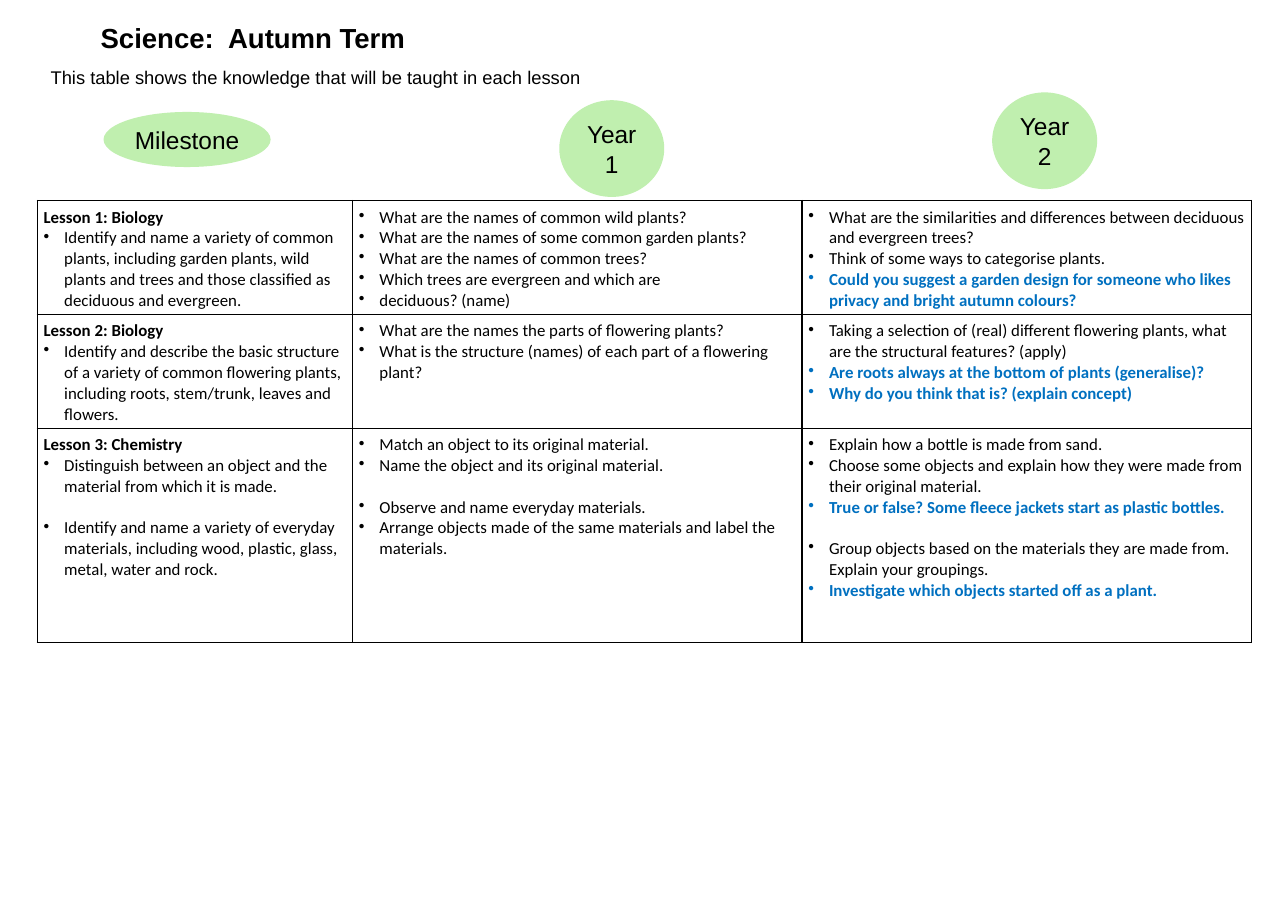
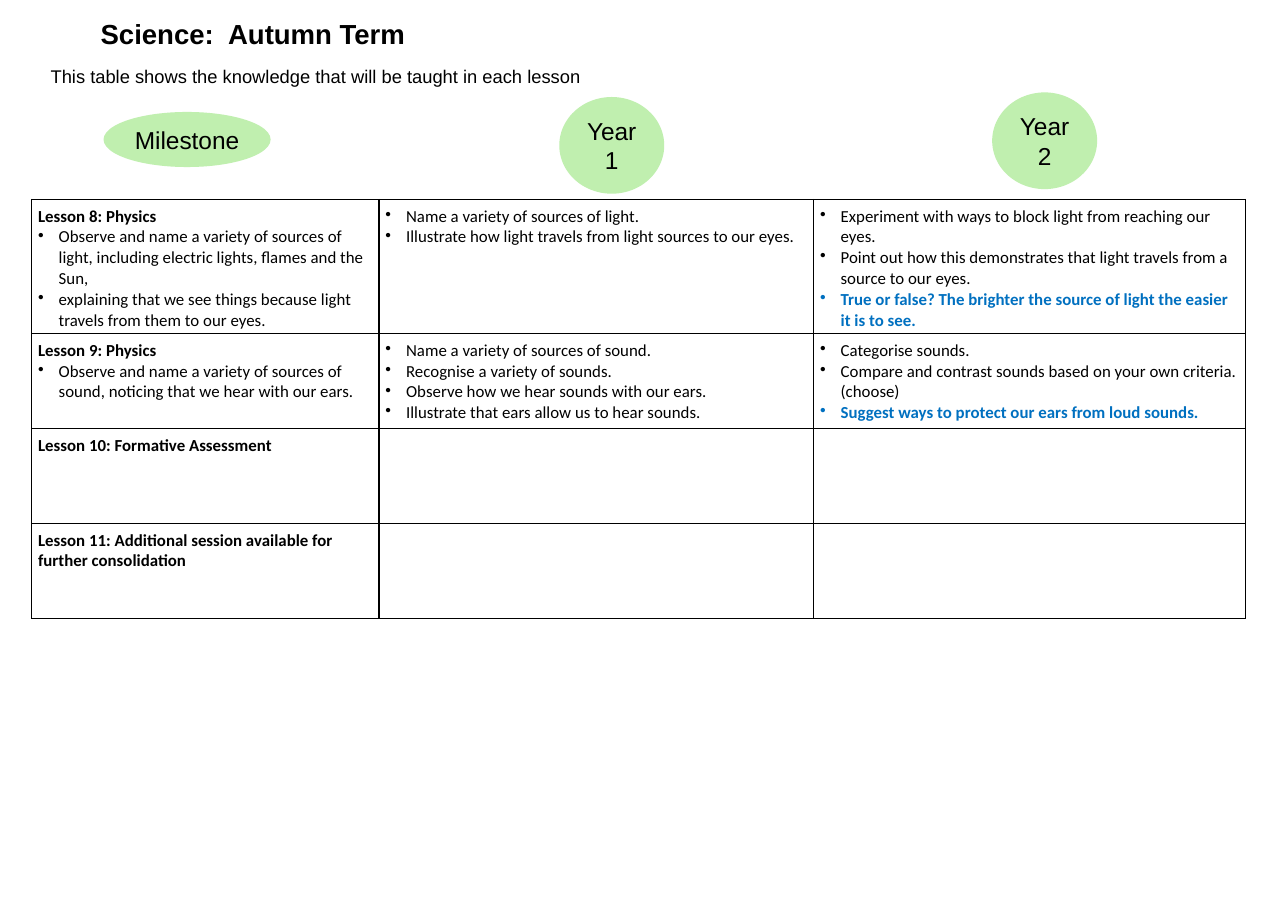
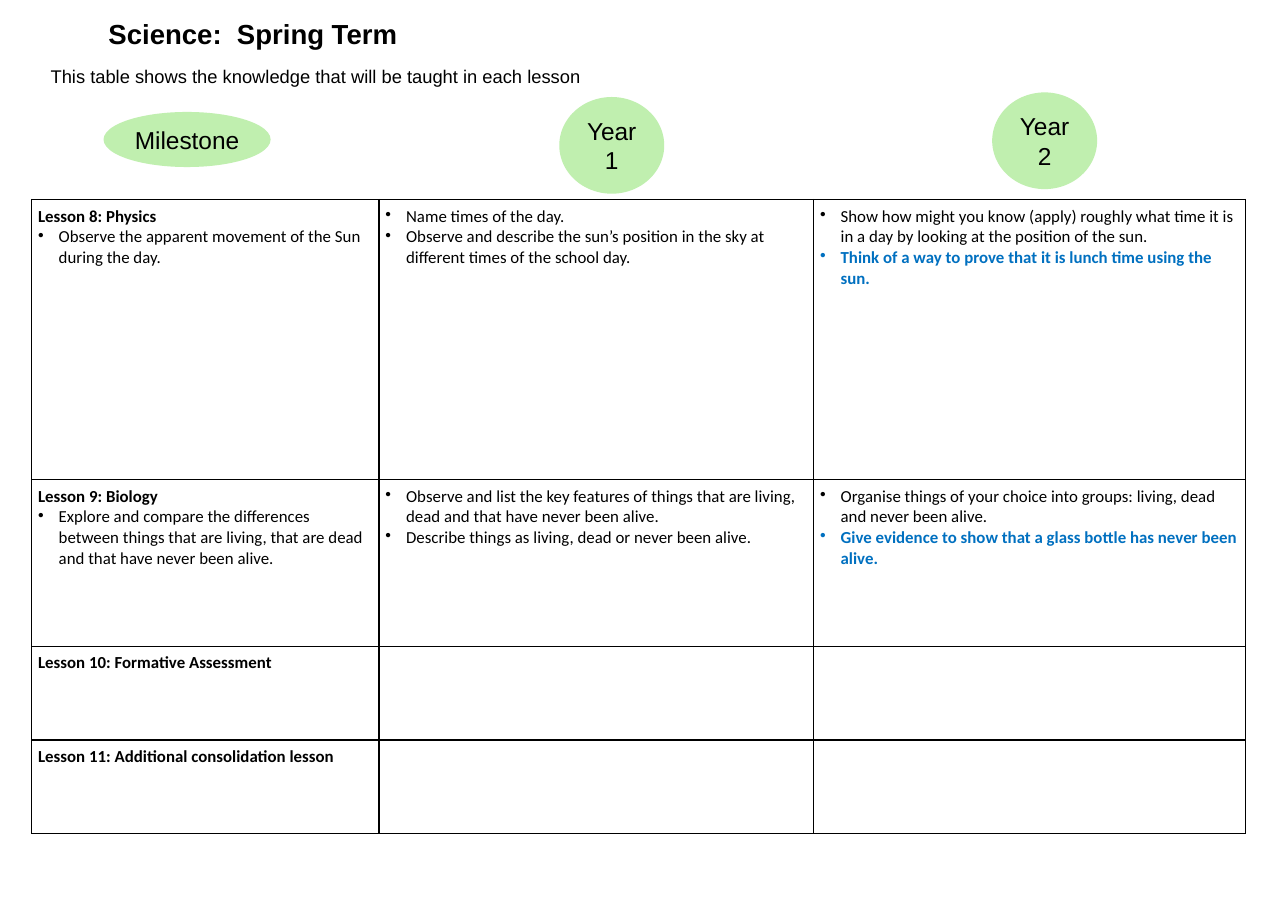
import dataclasses

import lxml.etree
import pptx
import pptx.dml.color
import pptx.enum.shapes
import pptx.enum.text
import pptx.oxml
import pptx.oxml.ns
import pptx.util

Pt = pptx.util.Pt
MIDDLE = pptx.enum.text.MSO_ANCHOR.MIDDLE
CENTER = pptx.enum.text.PP_ALIGN.CENTER


@dataclasses.dataclass(frozen=True)
class Theme:
    black: str = "000000"
    white: str = "FFFFFF"
    green: str = "C0EFAF"
    blue: str = "0070C0"
    head_font: str = "Arial"
    table_font: str = "Calibri"
    title_size: float = 18
    label_size: float = 16
    intro_size: float = 12
    table_size: float = 11
    box_inset: float = 2.9
    cell_inset: float = 4.2
    bullet_indent: float = 13.5
    group_gap: float = 13.5
    border: float = 1


@dataclasses.dataclass(frozen=True)
class Layout:
    """Vertical places and table grid of one kind of slide."""
    title_top: float
    intro_top: float
    year_1_top: float
    table_left: float
    table_top: float
    columns: tuple


@dataclasses.dataclass(frozen=True)
class Item:
    """One paragraph of a table cell."""
    text: str
    bulleted: bool = True
    bold: bool = False
    color: str = Theme.black
    gap: float = 0


def heading(text):
    return Item(text, bulleted=False, bold=True)


def challenge(text):
    return Item(text, bold=True, color=Theme.blue)


def new_group(text):
    """A bullet set apart from those above it."""
    return Item(text, gap=Theme.group_gap)


SLIDE_SIZE = (841.7, 594.7)
INTRO = "This table shows the knowledge that will be taught in each lesson"
FIRST = Layout(10.8, 40.3, 65.5, 24.3, 131, (206, 293.8, 293.8))
LATER = Layout(8, 39.6, 63.4, 20.7, 130.4, (227, 284, 282.5))

AUTUMN_START = [
    [[heading("Lesson 1: Biology"),
      Item("Identify and name a variety of common plants, including garden plants, wild plants "
           "and trees and those classified as deciduous and evergreen.")],
     [Item("What are the names of common wild plants?"),
      Item("What are the names of some common garden plants?"),
      Item("What are the names of common trees?"),
      Item("Which trees are evergreen and which are"),
      Item("deciduous? (name)")],
     [Item("What are the similarities and differences between deciduous and evergreen trees?"),
      Item("Think of some ways to categorise plants."),
      challenge("Could you suggest a garden design for someone who likes privacy and bright "
                "autumn colours?")]],
    [[heading("Lesson 2: Biology"),
      Item("Identify and describe the basic structure of a variety of common flowering plants, "
           "including roots, stem/trunk, leaves and flowers.")],
     [Item("What are the names the parts of flowering plants?"),
      Item("What is the structure (names) of each part of a flowering plant?")],
     [Item("Taking a selection of (real) different flowering plants, what are the structural "
           "features? (apply)"),
      challenge("Are roots always at the bottom of plants (generalise)?"),
      challenge("Why do you think that is? (explain concept)")]],
    [[heading("Lesson 3: Chemistry"),
      Item("Distinguish between an object and the material from which it is made."),
      new_group("Identify and name a variety of everyday materials, including wood, plastic, "
                "glass, metal, water and rock.")],
     [Item("Match an object to its original material."),
      Item("Name the object and its original material."),
      new_group("Observe and name everyday materials."),
      Item("Arrange objects made of the same materials and label the materials.")],
     [Item("Explain how a bottle is made from sand."),
      Item("Choose some objects and explain how they were made from their original material."),
      challenge("True or false? Some fleece jackets start as plastic bottles."),
      new_group("Group objects based on the materials they are made from. Explain your "
                "groupings."),
      challenge("Investigate which objects started off as a plant.")]],
]

AUTUMN_END = [
    [[heading("Lesson 8: Physics"),
      Item("Observe and name a variety of sources of light, including electric lights, flames "
           "and the Sun,"),
      Item("explaining that we see things because light travels from them to our eyes.")],
     [Item("Name a variety of sources of light."),
      Item("Illustrate how light travels from light sources to our eyes.")],
     [Item("Experiment with ways to block light from reaching our eyes."),
      Item("Point out how this demonstrates that light travels from a source to our eyes."),
      challenge("True or false? The brighter the source of light the easier it is to see.")]],
    [[heading("Lesson 9: Physics"),
      Item("Observe and name a variety of sources of sound, noticing that we hear with our "
           "ears.")],
     [Item("Name a variety of sources of sound."),
      Item("Recognise a variety of sounds."),
      Item("Observe how we hear sounds with our ears."),
      Item("Illustrate that ears allow us to hear sounds.")],
     [Item("Categorise sounds."),
      Item("Compare and contrast sounds based on your own criteria. (choose)"),
      challenge("Suggest ways to protect our ears from loud sounds.")]],
    [[heading("Lesson 10: Formative Assessment")], [], []],
    [[heading("Lesson 11: Additional session available for further consolidation")], [], []],
]

SPRING_END = [
    [[heading("Lesson 8: Physics"),
      Item("Observe the apparent movement of the Sun during the day.")],
     [Item("Name times of the day."),
      Item("Observe and describe the sun’s position in the sky at different times of the school "
           "day.")],
     [Item("Show how might you know (apply) roughly what time it is in a day by looking at the "
           "position of the sun."),
      challenge("Think of a way to prove that it is lunch time using the sun.")]],
    [[heading("Lesson 9: Biology"),
      Item("Explore and compare the differences between things that are living, that are dead "
           "and that have never been alive.")],
     [Item("Observe and list the key features of things that are living, dead and that have "
           "never been alive."),
      Item("Describe things as living, dead or never been alive.")],
     [Item("Organise things of your choice into groups: living, dead and never been alive."),
      challenge("Give evidence to show that a glass bottle has never been alive.")]],
    [[heading("Lesson 10: Formative Assessment")], [], []],
    [[heading("Lesson 11: Additional consolidation lesson")], [], []],
]

SLIDES = [
    ("Science:  Autumn Term", FIRST, (73.8, 73.8, 140.2), AUTUMN_START),
    ("Science:  Autumn Term", LATER, (87.6, 62, 62, 62), AUTUMN_END),
    ("Science:  Spring Term", LATER, (183, 109, 61.3, 61.3), SPRING_END),
]


def rgb(color):
    return pptx.dml.color.RGBColor.from_string(color)


def apply_format(target, values):
    for name, value in values.items():
        setattr(target, name, value)


def fill_solid(target, color):
    target.fill.solid()
    target.fill.fore_color.rgb = rgb(color)


def add_span(para, text, color=Theme.black, **font):
    span = para.add_run()
    span.text = text
    apply_format(span.font, font)
    span.font.color.rgb = rgb(color)


def set_insets(target, inset):
    sides = ("left", "top", "right", "bottom")
    apply_format(target, {f"margin_{side}": Pt(inset) for side in sides})


def write_box(box, text, size, align=None, wrap=True, bold=False):
    frame = box.text_frame
    apply_format(frame, {"word_wrap": wrap, "vertical_anchor": MIDDLE})
    set_insets(frame, Theme.box_inset)
    para = frame.paragraphs[0]
    para.alignment = align
    add_span(para, text, name=Theme.head_font, size=Pt(size), bold=bold)


def add_text(page, place, text, size, **style):
    write_box(page.shapes.add_textbox(*map(Pt, place)), text, size, **style)


def add_label(page, place, text):
    oval = page.shapes.add_shape(pptx.enum.shapes.MSO_SHAPE.OVAL, *map(Pt, place))
    oval.shadow.inherit = False
    fill_solid(oval, Theme.green)
    oval.line.fill.background()
    write_box(oval, text, Theme.label_size, align=CENTER)


def draw_borders(cell):
    properties = cell._tc.get_or_add_tcPr()
    for position, side in enumerate(("lnL", "lnR", "lnT", "lnB")):
        line = pptx.oxml.parse_xml(
            f'<a:{side} {pptx.oxml.ns.nsdecls("a")} w="{Pt(Theme.border)}">'
            f'<a:solidFill><a:srgbClr val="{Theme.black}"/></a:solidFill></a:{side}>')
        properties.insert(position, line)


def make_bullet(para):
    properties = para._p.get_or_add_pPr()
    indent = Pt(Theme.bullet_indent)
    properties.set("marL", str(indent))
    properties.set("indent", str(-indent))
    bullet = lxml.etree.SubElement(properties, pptx.oxml.ns.qn("a:buChar"))
    bullet.set("char", "•")


def write_cell(cell, items):
    fill_solid(cell, Theme.white)
    draw_borders(cell)
    set_insets(cell, Theme.cell_inset)
    frame = cell.text_frame
    for index, item in enumerate(items):
        para = frame.add_paragraph() if index else frame.paragraphs[0]
        if item.gap:
            para.space_before = Pt(item.gap)
        if item.bulleted:
            make_bullet(para)
        add_span(para, item.text, item.color, name=Theme.table_font,
                 size=Pt(Theme.table_size), bold=item.bold)


def add_lessons(page, layout, heights, lessons):
    place = (layout.table_left, layout.table_top, sum(layout.columns), sum(heights))
    table = page.shapes.add_table(len(heights), len(layout.columns), *map(Pt, place)).table
    apply_format(table, {"first_row": False, "horz_banding": False})
    for column, width in zip(table.columns, layout.columns):
        column.width = Pt(width)
    for row, height, lesson in zip(table.rows, heights, lessons):
        row.height = Pt(height)
        for cell, items in zip(row.cells, lesson):
            write_cell(cell, items)


def add_page(deck, title, layout, heights, lessons):
    page = deck.slides.add_slide(deck.slide_layouts[6])
    add_text(page, (60.5, layout.title_top, 209.5, 28), title, Theme.title_size,
             align=CENTER, wrap=False, bold=True)
    add_text(page, (30.2, layout.intro_top, 751, 20.2), INTRO, Theme.intro_size)
    add_lessons(page, layout, heights, lessons)
    add_label(page, (67.7, 73.2, 109.2, 36), "Milestone")
    add_label(page, (365.5, layout.year_1_top, 68.6, 63.2), "Year 1")
    add_label(page, (648.4, 60.4, 68.6, 63.2), "Year 2")


def main():
    deck = pptx.Presentation()
    deck.slide_width, deck.slide_height = map(Pt, SLIDE_SIZE)
    for content in SLIDES:
        add_page(deck, *content)
    deck.save("out.pptx")


if __name__ == "__main__":
    main()
